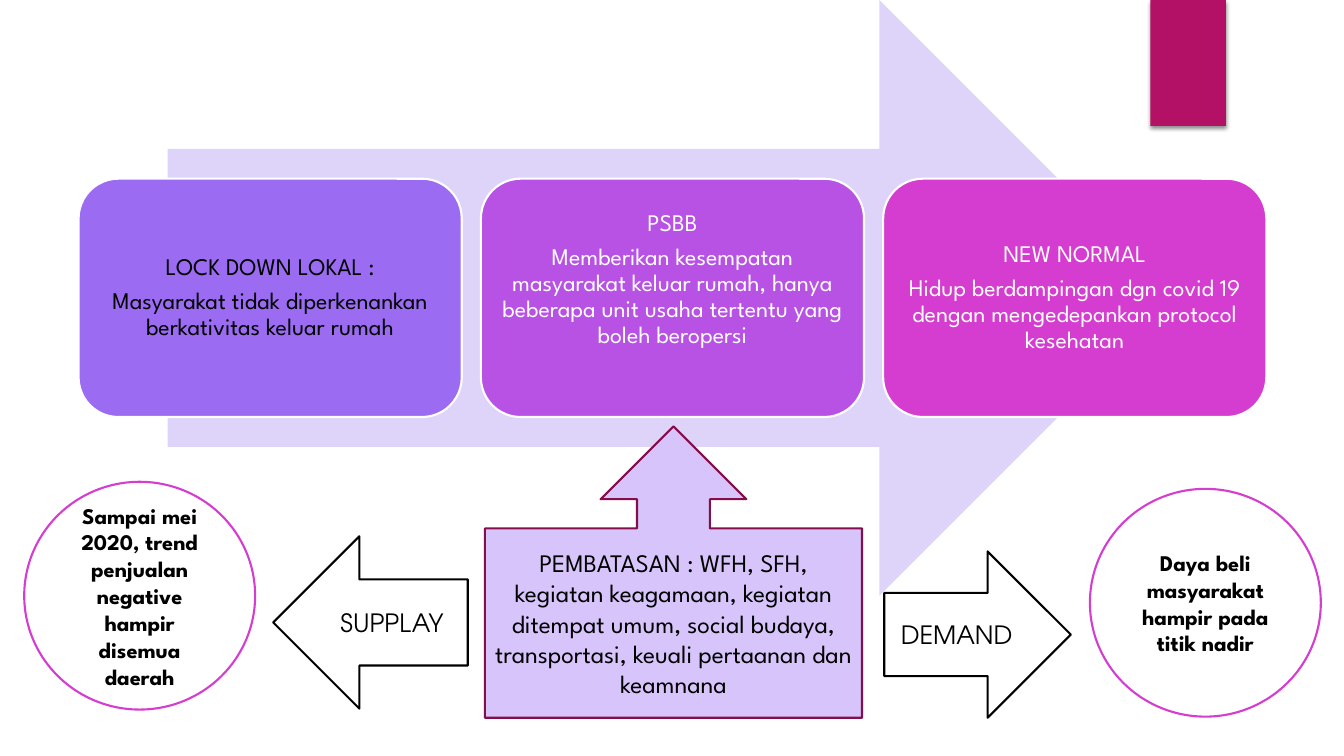
import pptx
import pptx.dml.color
import pptx.enum.shapes
import pptx.enum.text
import pptx.oxml
import pptx.util
from pptx.util import Inches

RGBColor = pptx.dml.color.RGBColor
SHAPE = pptx.enum.shapes.MSO_SHAPE

WHITE = RGBColor(0xFF, 0xFF, 0xFF)
BLACK = RGBColor(0x00, 0x00, 0x00)
CRIMSON = RGBColor(0xB3, 0x11, 0x66)
MAROON = RGBColor(0x84, 0x0D, 0x4B)
PALE_LILAC = RGBColor(0xDE, 0xD4, 0xFA)
LILAC = RGBColor(0xD7, 0xC4, 0xFA)
VIOLET = RGBColor(0x9B, 0x6B, 0xF2)
PURPLE = RGBColor(0xB8, 0x52, 0xE5)
MAGENTA = RGBColor(0xD5, 0x3D, 0xD0)

SPARTAN = "League Spartan"
ADVENTOR = "TeX Gyre Adventor"

TAB_SHADOW = (
    '<a:effectLst xmlns:a="http://schemas.openxmlformats.org/drawingml/2006/main">'
    '<a:outerShdw blurRad="38100" dist="25400" dir="5400000" rotWithShape="0">'
    '<a:srgbClr val="000000"><a:alpha val="45000"/></a:srgbClr>'
    "</a:outerShdw></a:effectLst>"
)

PHASES = [
    (VIOLET, BLACK, 0.07, ["LOCK DOWN LOKAL :",
                           "Masyarakat tidak diperkenankan berkativitas keluar rumah"]),
    (PURPLE, WHITE, 0.43, ["PSBB",
                           "Memberikan kesempatan masyarakat keluar rumah, hanya beberapa "
                           "unit usaha tertentu yang boleh beropersi"]),
    (MAGENTA, WHITE, 0.07, ["NEW NORMAL",
                            "Hidup berdampingan dgn covid 19 dengan mengedepankan protocol "
                            "kesehatan"]),
]


def add_block(slide, kind, left, top, width, height, fill, outline=None):
    block = slide.shapes.add_shape(
        kind, Inches(left), Inches(top), Inches(width), Inches(height))
    block.shadow.inherit = False
    block.fill.solid()
    block.fill.fore_color.rgb = fill
    if outline is None:
        block.line.fill.background()
    else:
        block.line.color.rgb = outline
        block.line.width = pptx.util.Pt(1.5)
    return block


def write(block, paragraphs, size=18, font=SPARTAN, color=BLACK, bold=False,
          line_spacing=None, space_after=None):
    frame = block.text_frame
    frame.word_wrap = True
    frame.vertical_anchor = pptx.enum.text.MSO_ANCHOR.MIDDLE
    for index, words in enumerate(paragraphs):
        paragraph = frame.add_paragraph() if index else frame.paragraphs[0]
        paragraph.alignment = pptx.enum.text.PP_ALIGN.CENTER
        if line_spacing is not None:
            paragraph.line_spacing = line_spacing
        if space_after is not None:
            paragraph.space_after = pptx.util.Pt(space_after)
        run = paragraph.add_run()
        run.text = words
        run.font.name = font
        run.font.size = pptx.util.Pt(size)
        run.font.bold = bold
        run.font.color.rgb = color


def add_corner_tab(slide, left, top, width, height):
    tab = add_block(slide, SHAPE.RECTANGLE, left, top, width, height, CRIMSON)
    properties = tab.element.spPr
    properties.remove(properties.find(pptx.oxml.ns.qn("a:effectLst")))
    properties.append(pptx.oxml.parse_xml(TAB_SHADOW))


def add_phases(slide, left, top, width, height):
    """Three phase cards in a row over the broad arrow that fills the box height."""
    arrow_width = 0.85 * width
    add_block(slide, SHAPE.RIGHT_ARROW, left + (width - arrow_width) / 2, top,
              arrow_width, height, PALE_LILAC)
    gap = 0.19
    card_width = (width - gap * (len(PHASES) - 1)) / len(PHASES)
    card_height = 0.4 * height
    for index, (fill, color, bottom_inset, paragraphs) in enumerate(PHASES):
        card = add_block(slide, SHAPE.ROUNDED_RECTANGLE,
                         left + index * (card_width + gap),
                         top + (height - card_height) / 2,
                         card_width, card_height, fill, WHITE)
        frame = card.text_frame
        frame.margin_left = frame.margin_right = frame.margin_top = Inches(0.07)
        frame.margin_bottom = Inches(bottom_inset)
        write(card, paragraphs, size=17, color=color, line_spacing=0.9, space_after=6)


def add_restrictions(slide, left, top, width, height):
    callout = add_block(slide, SHAPE.UP_ARROW_CALLOUT, left, top, width, height,
                        LILAC, MAROON)
    write(callout, ["PEMBATASAN : WFH, SFH, kegiatan keagamaan, kegiatan ditempat umum, "
                    "social budaya, transportasi, keuali pertaanan dan keamnana"])


def add_effect_arrow(slide, kind, left, top, width, height, label):
    arrow = add_block(slide, kind, left, top, width, height, WHITE, BLACK)
    write(arrow, [label], font=ADVENTOR)


def add_effect_circle(slide, left, top, width, height, finding):
    circle = add_block(slide, SHAPE.OVAL, left, top, width, height, WHITE, MAGENTA)
    write(circle, [finding], size=16, bold=True)


def main():
    deck = pptx.Presentation()
    deck.slide_width = Inches(13.33)
    deck.slide_height = Inches(7.5)
    slide = deck.slides.add_slide(deck.slide_layouts[6])

    add_corner_tab(slide, 11.41, 0, 0.75, 1.25)
    add_phases(slide, 0.78, 0, 11.78, 5.91)
    add_restrictions(slide, 4.81, 4.23, 3.74, 2.89)
    add_effect_circle(slide, 0.24, 4.78, 2.29, 2.26,
                      "Sampai mei 2020, trend penjualan negative hampir disemua daerah")
    add_effect_circle(slide, 10.81, 4.85, 2.29, 2.26,
                      "Daya beli masyarakat hampir pada titik nadir")
    add_effect_arrow(slide, SHAPE.LEFT_ARROW, 2.71, 5.32, 1.93, 1.71, "SUPPLAY")
    add_effect_arrow(slide, SHAPE.RIGHT_ARROW, 8.77, 5.47, 1.85, 1.65, "DEMAND")
    deck.save("out.pptx")


if __name__ == "__main__":
    main()
